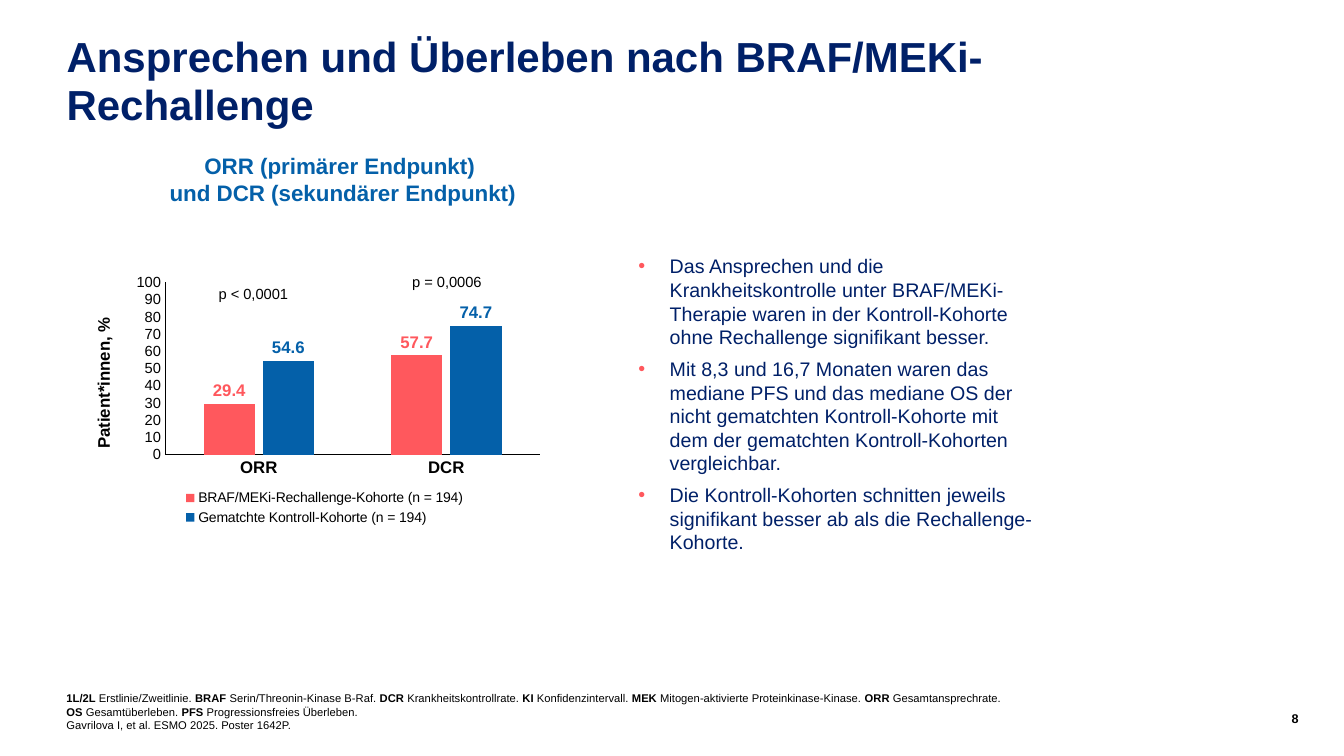
from lxml.etree import SubElement
from pptx import Presentation
from pptx.chart.data import CategoryChartData
from pptx.dml.color import RGBColor
from pptx.enum.chart import XL_CHART_TYPE as ChartType, XL_LABEL_POSITION as LabelPosition
from pptx.enum.chart import XL_LEGEND_POSITION as LegendPosition, XL_TICK_MARK as TickMark
from pptx.enum.shapes import MSO_SHAPE as Shape
from pptx.enum.text import MSO_ANCHOR as Anchor, MSO_AUTO_SIZE as AutoSize, PP_ALIGN as Align
from pptx.oxml import parse_xml
from pptx.oxml.ns import nsdecls, qn
from pptx.util import Inches, Pt

NAVY = RGBColor(0x00, 0x20, 0x68)
BLUE = RGBColor(0x04, 0x60, 0xA9)
CORAL = RGBColor(0xFF, 0x58, 0x5D)
BLACK = RGBColor(0x00, 0x00, 0x00)
FONT = "Arial"

COHORTS = [
    ("BRAF/MEKi-Rechallenge-Kohorte (n = 194)", (29.4, 57.7), CORAL),
    ("Gematchte Kontroll-Kohorte (n = 194)", (54.6, 74.7), BLUE),
]
FINDINGS = [
    "Das Ansprechen und die Krankheitskontrolle unter BRAF/MEKi-Therapie waren in der "
    "Kontroll-Kohorte ohne Rechallenge signifikant besser.",
    "Mit 8,3 und 16,7 Monaten waren das mediane PFS und das mediane OS der nicht gematchten "
    "Kontroll-Kohorte mit dem der gematchten Kontroll-Kohorten vergleichbar.",
    "Die Kontroll-Kohorten schnitten jeweils signifikant besser ab als die Rechallenge-Kohorte.",
]
FOOTNOTES = [
    "|1L/2L |Erstlinie/Zweitlinie. |BRAF |Serin/Threonin-Kinase B-Raf.| DCR |"
    "Krankheitskontrollrate. |KI |Konfidenzintervall. |MEK |Mitogen-aktivierte "
    "Proteinkinase-Kinase. |ORR |Gesamtansprechrate. \n|OS| Gesamtüberleben. |PFS |"
    "Progressionsfreies Überleben.",
    "Gavrilova I, et al. ESMO 2025. Poster 1642P.",
]


def style_font(font, size, color, bold=False):
    font.name, font.size, font.bold = FONT, Pt(size), bold
    font.color.rgb = color


def add_bullet(para):
    para.space_after = Pt(6)
    props = para._p.get_or_add_pPr()
    props.set("marL", str(Inches(0.31)))
    props.set("indent", str(-Inches(0.31)))
    color = SubElement(props, qn("a:buClr"))
    SubElement(color, qn("a:srgbClr")).set("val", str(CORAL))
    SubElement(props, qn("a:buFont")).set("typeface", FONT)
    SubElement(props, qn("a:buChar")).set("char", "•")


def write_text(frame, texts, size, color, bold=False, align=Align.LEFT, anchor=Anchor.TOP,
               inset=True, spacing=None, bullet=False):
    """A bar switches between regular and bold; a newline breaks the line."""
    frame.word_wrap = True
    frame.auto_size = AutoSize.NONE
    frame.vertical_anchor = anchor
    if not inset:
        frame.margin_left = frame.margin_right = frame.margin_top = frame.margin_bottom = 0
    for index, text in enumerate(texts):
        para = frame.add_paragraph() if index else frame.paragraphs[0]
        para.alignment = align
        if spacing:
            para.line_spacing = spacing
        if bullet:
            add_bullet(para)
        for part, words in enumerate(text.split("|")):
            for row, line in enumerate(words.split("\n")):
                if row:
                    para.add_line_break()
                if line:
                    span = para.add_run()
                    span.text = line
                    style_font(span.font, size, color, bold or part % 2 == 1)


def add_text(page, box, texts, size, color, **style):
    shape = page.shapes.add_textbox(*map(Inches, box))
    write_text(shape.text_frame, texts, size, color, **style)


def add_title(page, box, text):
    title = page.shapes.title
    title.left, title.top, title.width, title.height = map(Inches, box)
    write_text(title.text_frame, [text], 30, NAVY, bold=True, inset=False, spacing=0.95)


def place_part(element, x, y, width=None, height=None, inner=False):
    for old in element.findall(qn("c:layout")):
        element.remove(old)
    target = '<c:layoutTarget val="inner"/>' if inner else ""
    sizes = f'<c:w val="{width}"/><c:h val="{height}"/>' if width else ""
    layout = parse_xml(
        f'<c:layout {nsdecls("c")}><c:manualLayout>{target}<c:xMode val="edge"/>'
        f'<c:yMode val="edge"/><c:x val="{x}"/><c:y val="{y}"/>{sizes}'
        '</c:manualLayout></c:layout>')
    before = [child for child in element
              if child.tag in (qn("c:tx"), qn("c:legendPos"))]
    element.insert(element.index(before[-1]) + 1 if before else 0, layout)


def style_axis(axis, size, bold=False):
    axis.has_major_gridlines = False
    axis.major_tick_mark = axis.minor_tick_mark = TickMark.NONE
    axis.format.line.color.rgb = BLACK
    axis.format.line.width = Pt(0.75)
    style_font(axis.tick_labels.font, size, BLACK, bold)


def add_response_chart(page, box):
    data = CategoryChartData(number_format="0.0")
    data.categories = ["ORR", "DCR"]
    for name, rates, _ in COHORTS:
        data.add_series(name, rates)
    chart = page.shapes.add_chart(ChartType.COLUMN_CLUSTERED, *map(Inches, box), data).chart
    chart.has_title = False
    style_font(chart.font, 10, BLACK)
    plot = chart.plots[0]
    plot.gap_width, plot.overlap, plot.vary_by_categories = 150, -15, False
    for series, (_, _, color) in zip(plot.series, COHORTS):
        series.format.fill.solid()
        series.format.fill.fore_color.rgb = color
        labels = series.data_labels
        labels.show_value = True
        labels.position = LabelPosition.OUTSIDE_END
        style_font(labels.font, 12, color, True)

    style_axis(chart.category_axis, 12, True)
    rate_axis = chart.value_axis
    style_axis(rate_axis, 10.5)
    rate_axis.minimum_scale, rate_axis.maximum_scale, rate_axis.major_unit = 0, 100, 10
    rate_axis.tick_labels.number_format = "0"
    rate_axis.tick_labels.number_format_is_linked = False
    para = rate_axis.axis_title.text_frame.paragraphs[0]
    span = para.add_run()
    span.text = "Patient*innen, %"
    style_font(span.font, 12, BLACK, True)

    chart.has_legend = True
    chart.legend.position = LegendPosition.BOTTOM
    chart.legend.include_in_layout = False
    style_font(chart.legend.font, 10, BLACK)
    place_part(rate_axis.axis_title._element, 0.02, 0.17)
    place_part(chart.legend._element, 0.19, 0.82, 0.66, 0.16)
    place_part(chart._chartSpace.chart.plotArea, 0.18, 0.05, 0.8, 0.65, inner=True)


def add_response_panel(page, box):
    left, top, width, height = box
    add_text(page, (left, top, width, 0.54),
             ["ORR (primärer Endpunkt) \nund DCR (sekundärer Endpunkt)"], 16, BLUE,
             bold=True, align=Align.CENTER, inset=False)
    add_response_chart(page, (left - 0.16, top + 1.16, 4.65, height - 1.16))
    for x, y, text in [(1.11, 1.27, "p < 0,0001"), (3.03, 1.15, "p = 0,0006")]:
        add_text(page, (left + x, top + y, 1.02, 0.28), [text], 10.5, BLACK)


def add_findings(page, box):
    panel = page.shapes.add_shape(Shape.ROUNDED_RECTANGLE, *map(Inches, box))
    panel.shadow.inherit = False
    panel.fill.background()
    panel.line.fill.background()
    write_text(panel.text_frame, FINDINGS, 14, NAVY, bullet=True)


def add_footer(page, box):
    left, top, width, height = box
    add_text(page, box, FOOTNOTES, 8, BLACK, anchor=Anchor.BOTTOM, inset=False)
    add_text(page, (left + 11.71, top + 0.43, 0.51, 0.2), ["8"], 9, BLACK,
             bold=True, align=Align.RIGHT, inset=False)


def main():
    deck = Presentation()
    deck.slide_width, deck.slide_height = Inches(13.33), Inches(7.5)
    page = deck.slides.add_slide(deck.slide_layouts[5])
    add_title(page, (0.66, 0.34, 10.66, 1.17),
              "Ansprechen und Überleben nach BRAF/MEKi-Rechallenge")
    add_response_panel(page, (0.96, 1.51, 4.88, 3.79))
    add_findings(page, (6.05, 2.29, 4.56, 3.78))
    add_footer(page, (0.66, 6.62, 10.14, 0.64))
    deck.save("out.pptx")


if __name__ == "__main__":
    main()
